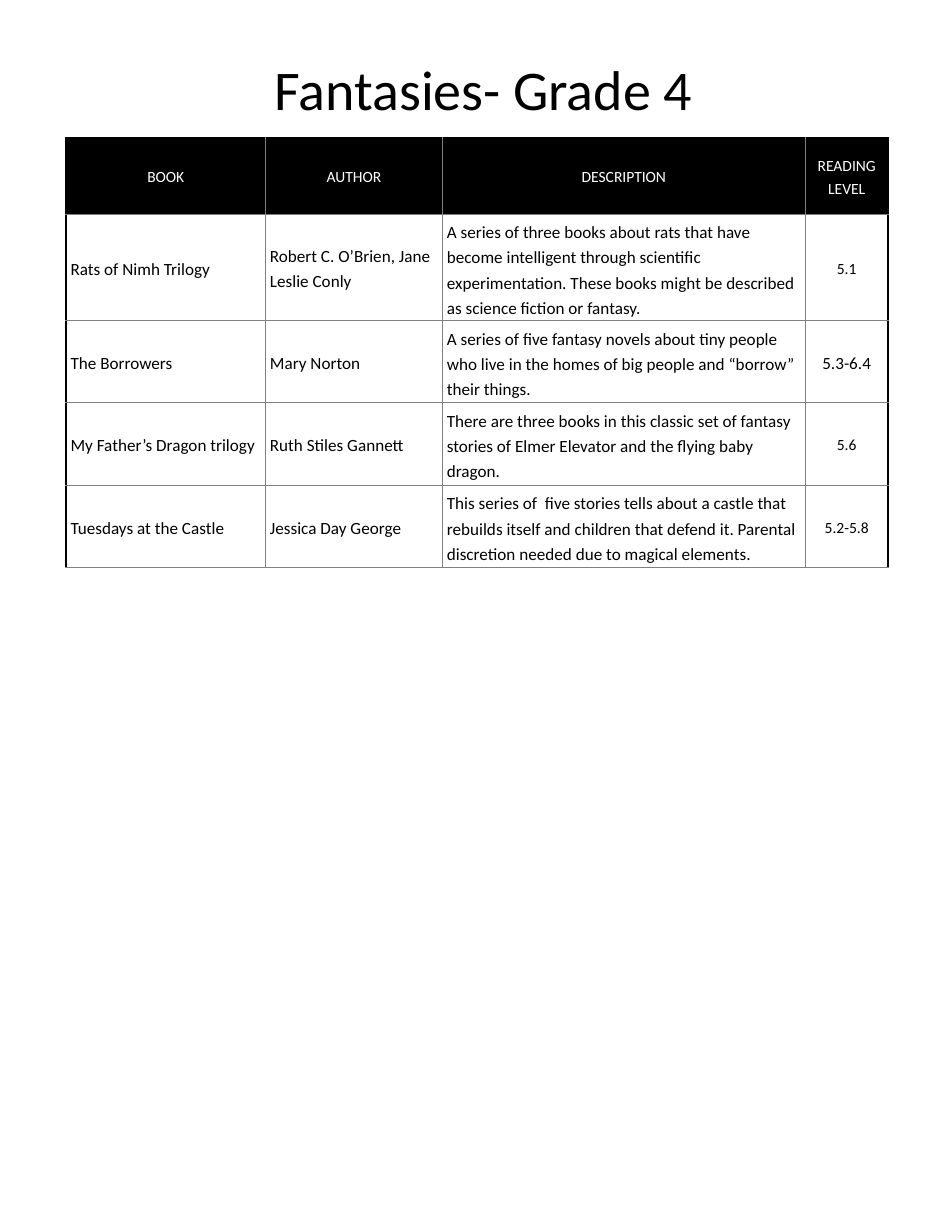
from lxml import etree
from pptx import Presentation
from pptx import util as u
from pptx.dml.color import RGBColor
from pptx.enum import text
from pptx.oxml import ns

BLACK = RGBColor(0x00, 0x00, 0x00)
WHITE = RGBColor(0xFF, 0xFF, 0xFF)
GREY = RGBColor(0x80, 0x80, 0x80)
FONT = "Calibri"
PAGE_W, PAGE_H = u.Inches(8.5), u.Inches(11)
TITLE_BOX = (1.46, 0.44, 5.71, 0.71)
TABLE_BOX = (0.59, 1.23, 7.33, 3.78)
COLUMNS = (1.78, 1.58, 3.24, 0.74)
HEADER_H, BOOK_H = 0.68, 0.49
HEADINGS = ("BOOK", "AUTHOR", "DESCRIPTION", "READING LEVEL")
BOOKS = (
    ("Rats of Nimh Trilogy", "Robert C. O’Brien, Jane Leslie Conly",
     "A series of three books about rats that have become intelligent through "
     "scientific experimentation. These books might be described as science "
     "fiction or fantasy.", "5.1", 10),
    ("The Borrowers", "Mary Norton",
     "A series of five fantasy novels about tiny people who live in the homes "
     "of big people and “borrow” their things.", "5.3-6.4", 11),
    ("My Father’s Dragon trilogy", "Ruth Stiles Gannett",
     "There are three books in this classic set of fantasy stories of Elmer "
     "Elevator and the flying baby dragon.", "5.6", 10),
    ("Tuesdays at the Castle", "Jessica Day George",
     "This series of  five stories tells about a castle that rebuilds itself "
     "and children that defend it. Parental discretion needed due to magical "
     "elements.", "5.2-5.8", 10),
)


def set_all(obj, **values):
    """Set each named attribute of an object."""
    for name, value in values.items():
        setattr(obj, name, value)


def write(p, words, size, color, **para):
    """Write one run in a paragraph and format both."""
    set_all(p, **para)
    r = p.add_run()
    r.text = words
    set_all(r.font, name=FONT, size=u.Pt(size), bold=False)
    r.font.color.rgb = color


def add_border(cell, side, color, width):
    """Draw one side of a cell's border."""
    ln = etree.SubElement(cell._tc.get_or_add_tcPr(), ns.qn(f"a:ln{side}"),
                          w=str(u.Pt(width)))
    fill = etree.SubElement(ln, ns.qn("a:solidFill"))
    etree.SubElement(fill, ns.qn("a:srgbClr"), val=str(color))


def fill_cell(cell, words, size, centred, header, outer):
    """Format one table cell, with black lines on its outer sides."""
    margin = u.Inches(0.04)
    set_all(cell, margin_left=margin, margin_right=margin, margin_top=margin,
            margin_bottom=margin, vertical_anchor=text.MSO_ANCHOR.MIDDLE)
    for side in "LRTB":
        add_border(cell, side, *((BLACK, 1) if side in outer else (GREY, 0.5)))
    if header:
        cell.fill.solid()
        cell.fill.fore_color.rgb = BLACK
    else:
        cell.fill.background()
    align = text.PP_ALIGN.CENTER if centred else text.PP_ALIGN.LEFT
    write(cell.text_frame.paragraphs[0], words, size, WHITE if header else BLACK,
          alignment=align, line_spacing=1.19, space_after=u.Pt(6))


def add_title(s, box, words):
    """Place and format the slide's title."""
    sp = s.shapes.title
    set_all(sp, **dict(zip(("left", "top", "width", "height"), map(u.Inches, box))))
    tf = sp.text_frame
    set_all(tf, word_wrap=True, auto_size=text.MSO_AUTO_SIZE.SHAPE_TO_FIT_TEXT,
            vertical_anchor=text.MSO_ANCHOR.TOP)
    write(tf.paragraphs[0], words, 36, BLACK, alignment=text.PP_ALIGN.CENTER)


def add_book_table(s, box):
    """Place the table of books under its header row."""
    last = len(COLUMNS) - 1
    table = s.shapes.add_table(len(BOOKS) + 1, len(COLUMNS), *map(u.Inches, box)).table
    set_all(table, first_row=False, horz_banding=False)
    for column, width in zip(table.columns, COLUMNS):
        column.width = u.Inches(width)
    for i, (*row, level_size) in enumerate([(*HEADINGS, 10), *BOOKS]):
        header = i == 0
        table.rows[i].height = u.Inches(HEADER_H if header else BOOK_H)
        for j, words in enumerate(row):
            outer = ("T" if header else "") + {0: "L", last: "R"}.get(j, "")
            size = level_size if header or j == last else 11
            fill_cell(table.cell(i, j), words, size, header or j == last, header, outer)


def main():
    """Build and save the slide."""
    prs = Presentation()
    set_all(prs, slide_width=PAGE_W, slide_height=PAGE_H)
    s = prs.slides.add_slide(prs.slide_layouts[5])
    add_title(s, TITLE_BOX, "Fantasies- Grade 4")
    add_book_table(s, TABLE_BOX)
    prs.save("out.pptx")


if __name__ == "__main__":
    main()
